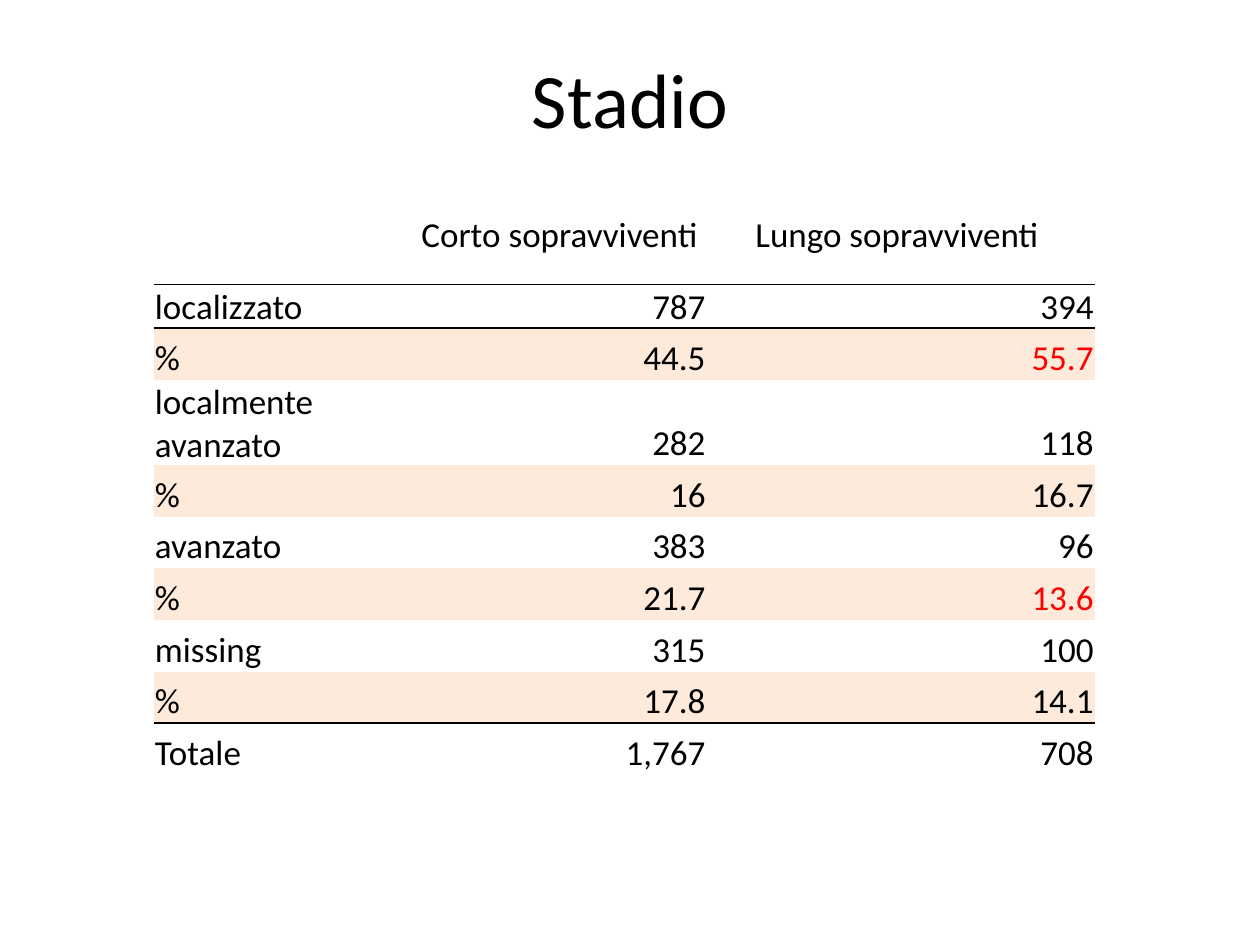
"""Build the slide that compares stage at diagnosis for short and long survivors."""
from lxml import etree
from pptx import Presentation
from pptx.dml.color import RGBColor
from pptx.enum.text import MSO_ANCHOR, PP_ALIGN
from pptx.oxml.ns import qn
from pptx.util import Inches, Pt

LEFT, MID, RIGHT = PP_ALIGN.LEFT, PP_ALIGN.CENTER, PP_ALIGN.RIGHT
CENTRE, BASE = MSO_ANCHOR.MIDDLE, MSO_ANCHOR.BOTTOM
WIDE, HIGH = Inches(10), Inches(7.5)
FONT = "Calibri"
PLAIN = "{2D5ABB26-0587-4C30-8999-92F81FD0307C}"
HUES = {"ink": "000000", "band": "FDEADA", "mark": "FF0000"}
COLS = [2.05, 2.34, 3.08]
ROWS = [0.79, 0.34, 0.41, 0.49] + [0.41] * 6
DATA = [
    ["", "Corto sopravviventi", "Lungo sopravviventi "],
    ["localizzato", "787", "394"],
    ["%", "44.5", "55.7"],
    ["localmente avanzato", "282", "118"],
    ["%", "16", "16.7"],
    ["avanzato", "383", "96"],
    ["%", "21.7", "13.6"],
    ["missing", "315", "100"],
    ["%", "17.8", "14.1"],
    ["Totale", "1,767", "708"],
]
MARKED = {"55.7", "13.6"}
RULED = {0, len(DATA) - 2}


def write(frame, text, size, align, hue="ink"):
    """Put one styled run in the first paragraph of a frame."""
    para = frame.paragraphs[0]
    para.alignment = align
    run = para.add_run()
    run.text = text
    run.font.name, run.font.size = FONT, Pt(size)
    run.font.color.rgb = RGBColor.from_string(HUES[hue])


def rule(cell, side):
    """Draw a one-point line on a side of a cell: lnT or lnB."""
    line = etree.Element(qn("a:" + side), w=str(Pt(1)))
    fill = etree.SubElement(line, qn("a:solidFill"))
    etree.SubElement(fill, qn("a:srgbClr"), val=HUES["ink"])
    cell._tc.get_or_add_tcPr().insert(0, line)


def style(cell, row, col):
    """Fill, rule and write one cell by its place in the grid."""
    text = DATA[row][col]
    cell.margin_left = cell.margin_right = cell.margin_top = Inches(0.01)
    cell.margin_bottom = 0
    cell.vertical_anchor = BASE if row else CENTRE
    if DATA[row][0] == "%":
        cell.fill.solid()
        cell.fill.fore_color.rgb = RGBColor.from_string(HUES["band"])
    else:
        cell.fill.background()
    if row in RULED:
        rule(cell, "lnB")
    if row - 1 in RULED:
        rule(cell, "lnT")
    if text:
        align = MID if row == 0 else RIGHT if col else LEFT
        write(cell.text_frame, text, 20, align, "mark" if text in MARKED else "ink")


def add_title(slide, text):
    """Add the centred title across the slide."""
    box = slide.shapes.add_textbox(0, Inches(0.36), WIDE, Inches(0.84))
    box.text_frame.word_wrap = True
    write(box.text_frame, text, 44, MID)


def add_grid(slide):
    """Add the table of counts and shares."""
    shape = slide.shapes.add_table(
        len(ROWS), len(COLS), Inches(1.22), Inches(1.47),
        Inches(sum(COLS)), Inches(sum(ROWS)))
    table = shape.table
    table.first_row = table.horz_banding = False
    table._tbl.tblPr.find(qn("a:tableStyleId")).text = PLAIN
    for col, width in enumerate(COLS):
        table.columns[col].width = Inches(width)
    for row, height in enumerate(ROWS):
        table.rows[row].height = Inches(height)
        for col in range(len(COLS)):
            style(table.cell(row, col), row, col)


def main():
    """Build and save the deck."""
    deck = Presentation()
    deck.slide_width, deck.slide_height = WIDE, HIGH
    slide = deck.slides.add_slide(deck.slide_layouts[6])
    add_title(slide, "Stadio")
    add_grid(slide)
    deck.save("out.pptx")


if __name__ == "__main__":
    main()
